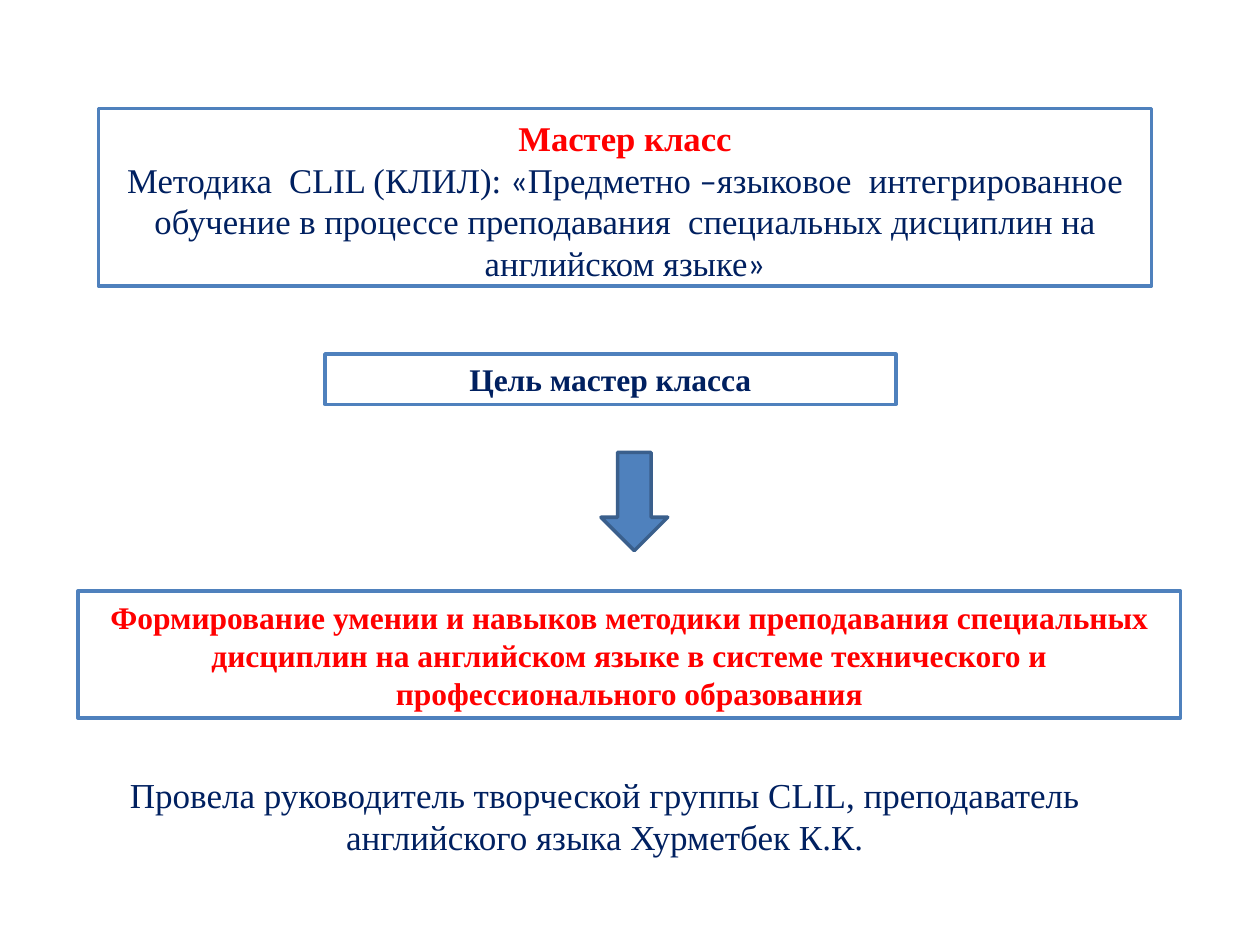
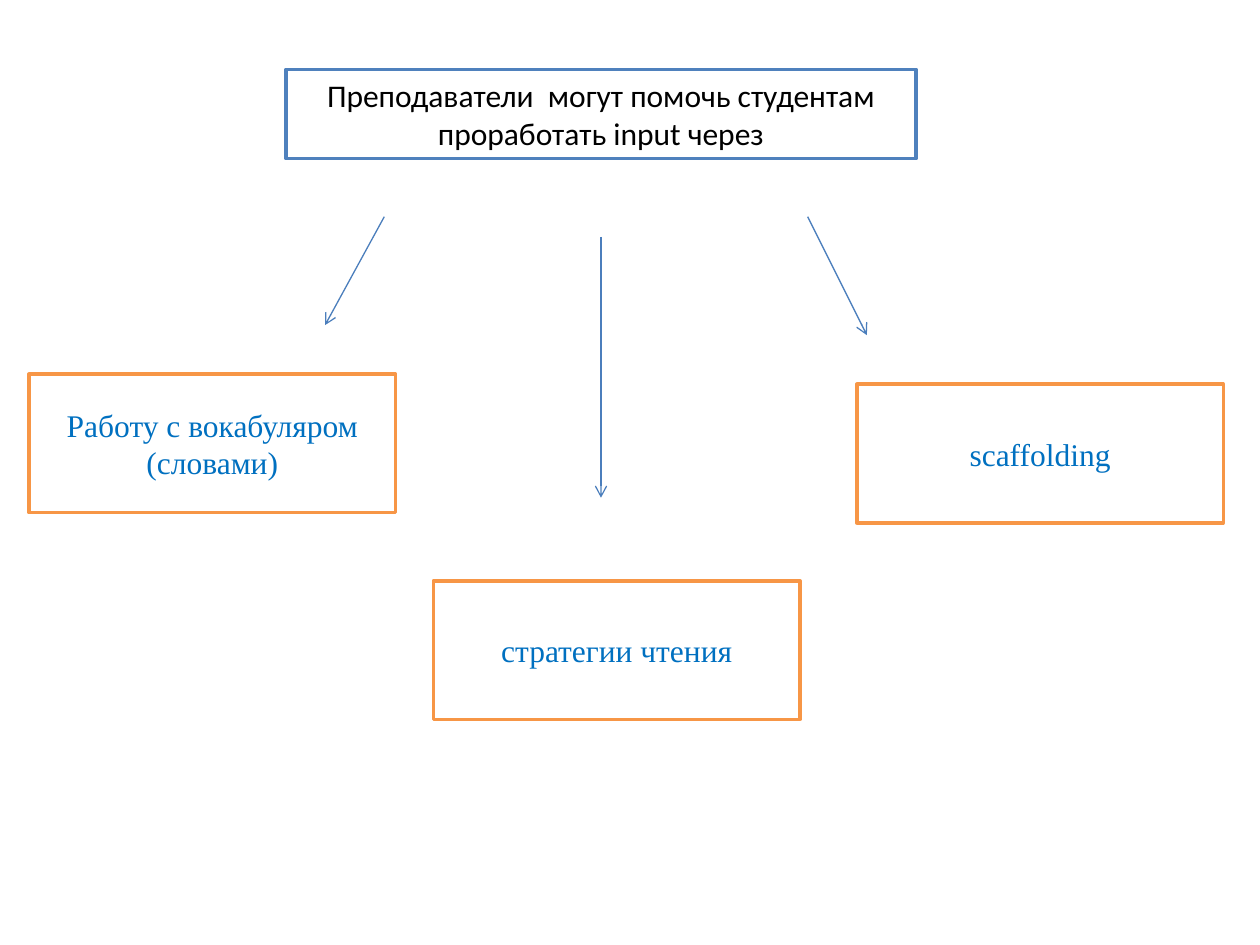
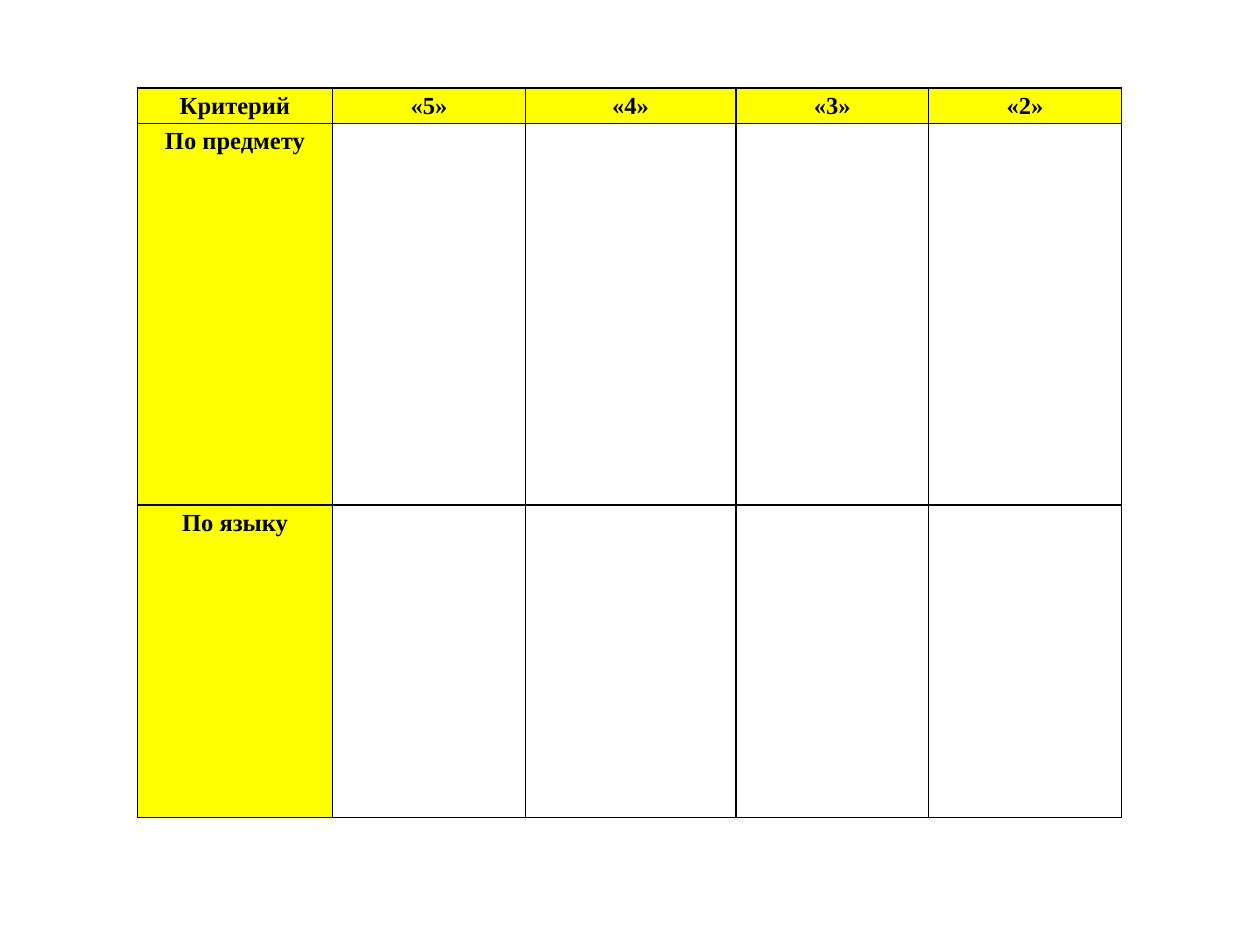
from lxml import etree
from pptx import Presentation
from pptx import util as u
from pptx.dml.color import RGBColor
from pptx.enum import shapes, text
from pptx.oxml.ns import qn

WHITE = RGBColor(0xFF, 0xFF, 0xFF)
BLACK = RGBColor(0x00, 0x00, 0x00)
NAVY = RGBColor(0x00, 0x20, 0x60)
RED = RGBColor(0xFF, 0x00, 0x00)
BLUE = RGBColor(0x4F, 0x81, 0xBD)
DARK_BLUE = RGBColor(0x3A, 0x5F, 0x8C)
ARROW_BLUE = RGBColor(0x4B, 0x7E, 0xBC)
TEXT_BLUE = RGBColor(0x00, 0x70, 0xC0)
ORANGE = RGBColor(0xF7, 0x96, 0x46)
YELLOW = RGBColor(0xFF, 0xFF, 0x00)
SERIF, SANS = "Times New Roman", "Calibri"

HEADING = "Мастер класс"
METHOD = [
    ("Методика  CLIL (КЛИЛ): ", SERIF),
    ("«", SANS),
    ("Предметно ", SERIF),
    ("–", SANS),
    ("языковое  интегрированное обучение в процессе преподавания  "
     "специальных дисциплин на английском языке", SERIF),
    ("»", SANS),
]
GOAL_LABEL = "Цель мастер класса"
GOAL = ("Формирование умении и навыков методики преподавания специальных дисциплин "
        "на английском языке в системе технического и профессионального образования")
PRESENTER = ("Провела руководитель творческой группы CLIL, преподаватель "
             "английского языка Хурметбек К.К.")

INPUT_QUESTION = "Преподаватели  могут помочь студентам проработать input через"
WAYS = [
    ("Работу с вокабуляром (словами)", 0.23, 2.97),
    ("стратегии чтения", 3.44, 4.61),
    ("scaffolding", 6.8, 3.05),
]
WAY_SIZE = (2.91, 1.1)
WAY_ARROWS = [
    (4.77, 1.88, 4.77, 3.95),
    (3.05, 1.72, 2.58, 2.58),
    (6.41, 1.72, 6.88, 2.66),
]

CRITERIA = [
    ["Критерий", "«5»", "«4»", "«3»", "«2»"],
    ["По предмету", "", "", "", ""],
    ["По языку", "", "", "", ""],
]
CRITERIA_COLUMNS = [1.55, 1.53, 1.67, 1.53, 1.53]
CRITERIA_ROWS = [0.28, 3.03, 2.48]


def inches(values):
    return [u.Inches(value) for value in values]


def style_run(run, size, color, font=SERIF, bold=False):
    run.font.size = u.Pt(size)
    run.font.color.rgb = color
    run.font.name = font
    run.font.bold = bold


def write(frame, words, size, color, font=SERIF, bold=False):
    frame.word_wrap = True
    frame.text = words
    paragraph = frame.paragraphs[0]
    paragraph.alignment = text.PP_ALIGN.CENTER
    style_run(paragraph.runs[0], size, color, font, bold)


def paint(shape, fill, line):
    shape.fill.solid()
    shape.fill.fore_color.rgb = fill
    shape.line.color.rgb = line
    shape.line.width = u.Pt(2)


def add_figure(slide, kind, place, fill, line):
    figure = slide.shapes.add_shape(kind, *inches(place))
    figure.shadow.inherit = False
    paint(figure, fill, line)
    return figure


def add_box(slide, place, words, color, line=BLUE, font=SERIF, bold=False):
    box = add_figure(slide, shapes.MSO_SHAPE.RECTANGLE, place, WHITE, line)
    write(box.text_frame, words, 18, color, font, bold)


def add_arrow(slide, ends):
    arrow = slide.shapes.add_connector(shapes.MSO_CONNECTOR.STRAIGHT, *inches(ends))
    arrow.line.color.rgb = ARROW_BLUE
    arrow.line.width = u.Pt(0.75)
    etree.SubElement(arrow.line._get_or_add_ln(), qn("a:tailEnd"), type="arrow")
    etree.SubElement(arrow._element.spPr, qn("a:effectLst"))


def add_borders(cell):
    properties = cell._tc.get_or_add_tcPr()
    for index, side in enumerate(("a:lnL", "a:lnR", "a:lnT", "a:lnB")):
        border = etree.Element(qn(side), w=str(u.Pt(1)))
        fill = etree.SubElement(border, qn("a:solidFill"))
        etree.SubElement(fill, qn("a:srgbClr"), val=str(BLACK))
        properties.insert(index, border)


def build_goal(deck):
    slide = deck.slides.add_slide(deck.slide_layouts[5])
    title = slide.shapes.title
    title.left, title.top, title.width, title.height = inches((0.78, 0.86, 8.36, 1.41))
    paint(title, WHITE, BLUE)
    frame = title.text_frame
    write(frame, HEADING, 19.8, RED, bold=True)
    frame.auto_size = text.MSO_AUTO_SIZE.NONE
    frame.vertical_anchor = text.MSO_ANCHOR.MIDDLE
    frame.margin_top = u.Inches(0.1)
    method = frame.add_paragraph()
    method.alignment = text.PP_ALIGN.CENTER
    for paragraph in frame.paragraphs:
        paragraph.space_before = u.Pt(0)
    for words, font in METHOD:
        run = method.add_run()
        run.text = words
        style_run(run, 19.8, NAVY, font)

    add_box(slide, (2.58, 2.81, 4.53, 0.4), GOAL_LABEL, NAVY, bold=True)
    add_box(slide, (0.62, 4.69, 8.75, 1.01), GOAL, RED, bold=True)
    add_figure(slide, shapes.MSO_SHAPE.DOWN_ARROW, (4.77, 3.59, 0.53, 0.78), BLUE, DARK_BLUE)
    presenter = slide.shapes.add_textbox(*inches((0.31, 6.09, 8.98, 0.77)))
    write(presenter.text_frame, PRESENTER, 20, NAVY)


def build_ways(deck):
    slide = deck.slides.add_slide(deck.slide_layouts[6])
    add_box(slide, (2.27, 0.55, 5, 0.71), INPUT_QUESTION, BLACK, font=SANS)
    for ends in WAY_ARROWS:
        add_arrow(slide, ends)
    for words, left, top in WAYS:
        add_box(slide, (left, top, *WAY_SIZE), words, TEXT_BLUE, ORANGE)


def build_criteria(deck):
    slide = deck.slides.add_slide(deck.slide_layouts[6])
    place = (1.09, 0.7, sum(CRITERIA_COLUMNS), sum(CRITERIA_ROWS))
    table = slide.shapes.add_table(len(CRITERIA), len(CRITERIA[0]), *inches(place)).table
    table.first_row = table.horz_banding = False
    for column, width in zip(table.columns, inches(CRITERIA_COLUMNS)):
        column.width = width
    for row, height in zip(table.rows, inches(CRITERIA_ROWS)):
        row.height = height
    for row, labels in zip(table.rows, CRITERIA):
        for cell, label in zip(row.cells, labels):
            cell.margin_left = cell.margin_right = u.Inches(0.07)
            cell.margin_top = cell.margin_bottom = 0
            if label:
                cell.fill.solid()
                cell.fill.fore_color.rgb = YELLOW
                write(cell.text_frame, label, 14, BLACK, bold=True)
                paragraph = cell.text_frame.paragraphs[0]
                paragraph.line_spacing = 1.15
                paragraph.space_after = u.Pt(10)
            else:
                cell.fill.background()
            add_borders(cell)


def main():
    deck = Presentation()
    deck.slide_width, deck.slide_height = inches((10, 7.5))
    build_goal(deck)
    build_ways(deck)
    build_criteria(deck)
    deck.save("out.pptx")


if __name__ == "__main__":
    main()
